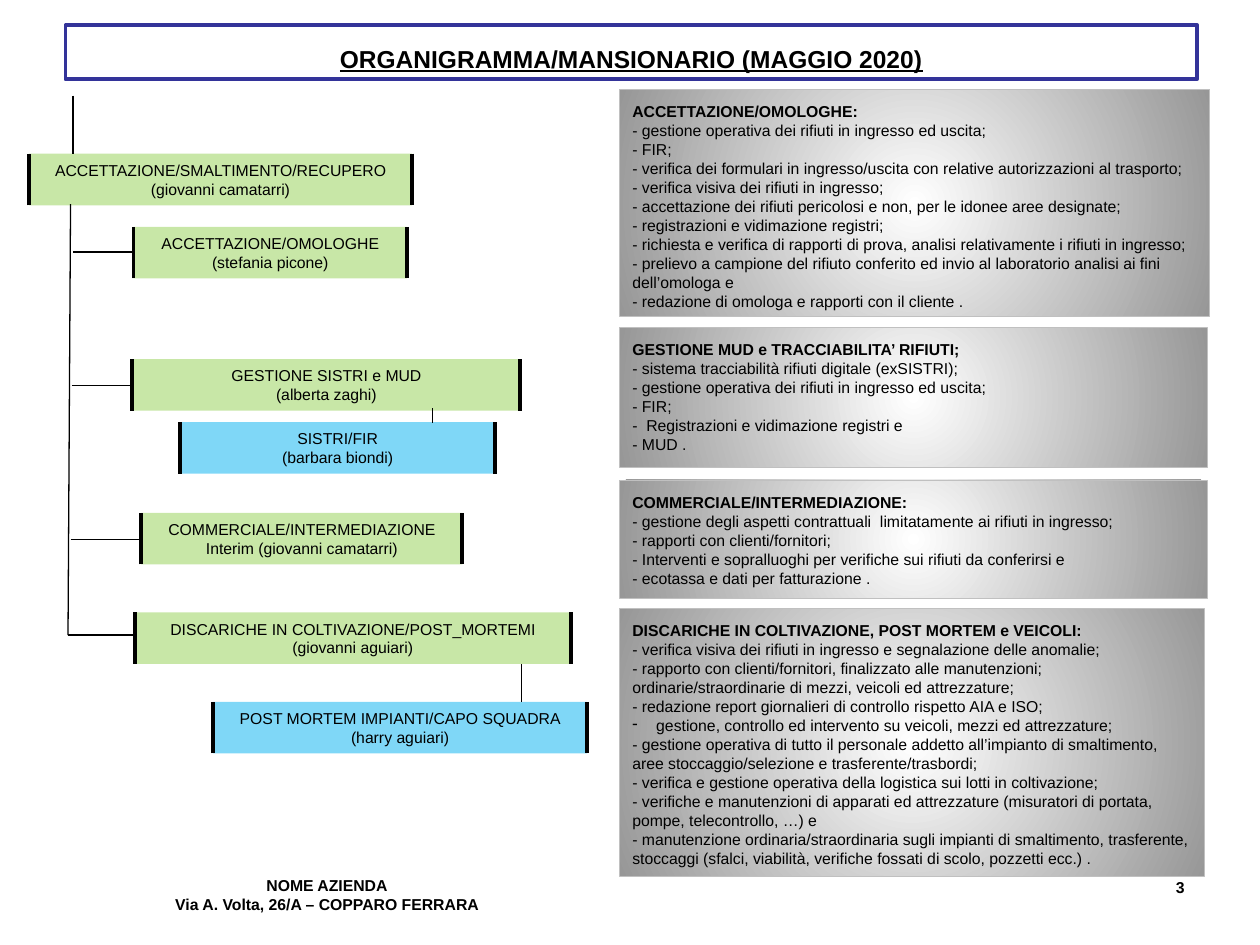
from lxml import etree
from pptx import Presentation
from pptx.dml.color import RGBColor
from pptx.enum.shapes import MSO_CONNECTOR, MSO_SHAPE
from pptx.enum.text import MSO_ANCHOR, PP_ALIGN
from pptx.oxml import parse_xml
from pptx.oxml.ns import nsdecls, qn
from pptx.util import Inches, Pt

BLACK = RGBColor(0, 0, 0)
NAVY = RGBColor(0x33, 0x33, 0x99)
SILVER = RGBColor(0xC0, 0xC0, 0xC0)
GREEN = RGBColor(0x92, 0xD0, 0x50)
BLUE = RGBColor(0x00, 0xB0, 0xF0)
WHITE = RGBColor(0xFF, 0xFF, 0xFF)
GREY = RGBColor(0x97, 0x97, 0x97)
FONT = "Arial"
BOX_H = 0.41
BULLET = "• "  # marks a duty set as a real dash bullet with a hanging indent

# left, top, width, colour, role, person
ROLES = [
    (0.23, 1.22, 3.04, GREEN, "ACCETTAZIONE/SMALTIMENTO/RECUPERO", "(giovanni camatarri)"),
    (1.06, 1.8, 2.17, GREEN, "ACCETTAZIONE/OMOLOGHE", "(stefania picone)"),
    (1.05, 2.85, 3.08, GREEN, "GESTIONE SISTRI e MUD", "(alberta zaghi)"),
    (1.43, 3.35, 2.5, BLUE, "SISTRI/FIR", "(barbara biondi)"),
    (1.12, 4.07, 2.55, GREEN, "COMMERCIALE/INTERMEDIAZIONE", "Interim (giovanni camatarri)"),
    (1.07, 4.86, 3.46, GREEN, "DISCARICHE IN COLTIVAZIONE/POST_MORTEMI", "(giovanni aguiari)"),
    (1.69, 5.57, 2.97, BLUE, "POST MORTEM IMPIANTI/CAPO SQUADRA", "(harry aguiari)"),
]

# x1, y1, x2, y2
LINKS = [
    (0.58, 0.76, 0.58, 1.22),
    (0.56, 1.62, 0.54, 5.04),
    (0.58, 2, 1.06, 2),
    (0.57, 3.06, 1.03, 3.06),
    (0.56, 4.28, 1.12, 4.28),
    (0.54, 5.04, 1.06, 5.04),
    (3.43, 3.24, 3.43, 3.36),
    (4.14, 5.27, 4.14, 5.57),
]

# top, width, height, heading, duties
PANELS = [
    (0.71, 4.68, 1.8, "ACCETTAZIONE/OMOLOGHE:", [
        "- gestione operativa dei rifiuti in ingresso ed uscita;",
        "- FIR;",
        "- verifica dei formulari in ingresso/uscita con relative autorizzazioni al trasporto;",
        "- verifica visiva dei rifiuti in ingresso;",
        "- accettazione dei rifiuti pericolosi e non, per le idonee aree designate;",
        "- registrazioni e vidimazione registri;",
        "- richiesta e verifica di rapporti di prova, analisi relativamente i rifiuti in ingresso;",
        "- prelievo a campione del rifiuto conferito ed invio al laboratorio analisi ai fini "
        "dell’omologa e",
        "- redazione di omologa e rapporti con il cliente .",
    ]),
    (2.6, 4.66, 1.11, "GESTIONE MUD e TRACCIABILITA’ RIFIUTI;", [
        "- sistema tracciabilità rifiuti digitale (exSISTRI);",
        "- gestione operativa dei rifiuti in ingresso ed uscita;",
        "- FIR;",
        "-  Registrazioni e vidimazione registri e",
        "- MUD .",
    ]),
    (3.81, 4.66, 0.94, "COMMERCIALE/INTERMEDIAZIONE:", [
        "- gestione degli aspetti contrattuali  limitatamente ai rifiuti in ingresso;",
        "- rapporti con clienti/fornitori;",
        "- Interventi e sopralluoghi per verifiche sui rifiuti da conferirsi e",
        "- ecotassa e dati per fatturazione .",
    ]),
    (4.83, 4.64, 2.13, "DISCARICHE IN COLTIVAZIONE, POST MORTEM e VEICOLI:", [
        "- verifica visiva dei rifiuti in ingresso e segnalazione delle anomalie;",
        "- rapporto con clienti/fornitori, finalizzato alle manutenzioni;  "
        "ordinarie/straordinarie di mezzi, veicoli ed attrezzature;",
        "- redazione report giornalieri di controllo rispetto AIA e ISO;",
        BULLET + "gestione, controllo ed intervento su veicoli, mezzi ed attrezzature;",
        "- gestione operativa di tutto il personale addetto all’impianto di smaltimento, "
        "aree stoccaggio/selezione e trasferente/trasbordi;",
        "- verifica e gestione operativa della logistica sui lotti in coltivazione;",
        "- verifiche e manutenzioni di apparati ed attrezzature (misuratori di portata, "
        "pompe, telecontrollo, …) e",
        "- manutenzione ordinaria/straordinaria sugli impianti di smaltimento, trasferente, "
        "stoccaggi (sfalci, viabilità, verifiche fossati di scolo, pozzetti ecc.) .",
    ]),
]


def add_run(p, text, size=9, bold=False):
    r = p.add_run()
    r.text = text
    r.font.name, r.font.size, r.font.bold = FONT, Pt(size), bold
    r.font.color.rgb = BLACK
    return r


def add_lines(tf, lines, align, bold=False):
    for i, text in enumerate(lines):
        p = tf.paragraphs[0] if i == 0 else tf.add_paragraph()
        p.alignment = align
        add_run(p, text, bold=bold)


def set_insets(tf, x, y):
    tf.margin_left = tf.margin_right = Inches(x)
    tf.margin_top = tf.margin_bottom = Inches(y)


def set_radial_fill(sp):
    """White centre fading to grey at the corners."""
    sp.fill.background()
    old = sp._element.spPr.find(qn("a:noFill"))
    old.getparent().replace(old, parse_xml(
        f'<a:gradFill {nsdecls("a")} rotWithShape="1"><a:gsLst>'
        f'<a:gs pos="0"><a:srgbClr val="{WHITE}"/></a:gs>'
        f'<a:gs pos="100000"><a:srgbClr val="{GREY}"/></a:gs></a:gsLst>'
        '<a:path path="circle"><a:fillToRect l="50000" t="50000" r="50000" b="50000"/>'
        '</a:path></a:gradFill>'))


def set_dash_bullet(p):
    pPr = p._p.get_or_add_pPr()
    pPr.set("marL", str(Inches(0.19)))
    pPr.set("indent", str(-Inches(0.19)))
    etree.SubElement(pPr, qn("a:buChar")).set("char", "-")


def add_title(s, left, top, width, height):
    sp = s.shapes.title
    sp.left, sp.top, sp.width, sp.height = map(Inches, (left, top, width, height))
    sp.line.color.rgb = NAVY
    sp.line.width = Pt(2.25)
    tf = sp.text_frame
    tf.vertical_anchor = MSO_ANCHOR.BOTTOM
    p = tf.paragraphs[0]
    p.alignment = PP_ALIGN.CENTER
    add_run(p, "ORGANIGRAMMA/MANSIONARIO (MAGGIO 2020)", 14, True).font.underline = True


def add_role(s, left, top, width, color, role, person):
    sp = s.shapes.add_shape(MSO_SHAPE.DOUBLE_BRACKET, *map(Inches, (left, top, width, BOX_H)))
    sp.adjustments[0] = 0
    sp.shadow.inherit = False
    sp.fill.solid()
    sp.fill.fore_color.rgb = color
    clr = sp._element.spPr.find(qn("a:solidFill"))[0]
    etree.SubElement(clr, qn("a:alpha")).set("val", "50000")
    sp.line.color.rgb = BLACK
    sp.line.width = Pt(2.25)
    tf = sp.text_frame
    tf.word_wrap = False
    tf.vertical_anchor = MSO_ANCHOR.MIDDLE
    set_insets(tf, 0.04, 0.02)
    add_lines(tf, (role, person), PP_ALIGN.CENTER)


def add_link(s, *ends):
    c = s.shapes.add_connector(MSO_CONNECTOR.STRAIGHT, *map(Inches, ends))
    c.line.color.rgb = BLACK
    c.line.width = Pt(0.75)
    etree.SubElement(c._element.spPr, qn("a:effectLst"))


def add_panel(s, left, top, width, height, heading, duties):
    sp = s.shapes.add_shape(MSO_SHAPE.RECTANGLE, *map(Inches, (left, top, width, height)))
    sp.shadow.inherit = False
    set_radial_fill(sp)
    sp.line.color.rgb = SILVER
    sp.line.width = Pt(0.5)
    tf = sp.text_frame
    tf.word_wrap = True
    tf.vertical_anchor = MSO_ANCHOR.TOP
    set_insets(tf, 0.1, 0.1)
    add_lines(tf, [heading], PP_ALIGN.LEFT, bold=True)
    for duty in duties:
        p = tf.add_paragraph()
        p.alignment = PP_ALIGN.LEFT
        if duty.startswith(BULLET):
            set_dash_bullet(p)
        add_run(p, duty.removeprefix(BULLET))


def add_footer(s, left, top, width, height, lines, align):
    tf = s.shapes.add_textbox(*map(Inches, (left, top, width, height))).text_frame
    tf.word_wrap = True
    add_lines(tf, lines, align, bold=True)


def main():
    prs = Presentation()
    prs.slide_width, prs.slide_height = Inches(10), Inches(7.5)
    s = prs.slides.add_slide(prs.slide_layouts[5])
    add_title(s, 0.52, 0.2, 8.98, 0.43)
    for role in ROLES:
        add_role(s, *role)
    for link in LINKS:
        add_link(s, *link)
    for panel in PANELS:
        add_panel(s, 4.92, *panel)
    add_footer(s, 1.01, 6.9, 3.17, 0.43,
               ["NOME AZIENDA", "Via A. Volta, 26/A – COPPARO FERRARA"], PP_ALIGN.CENTER)
    add_footer(s, 7.17, 6.92, 2.33, 0.43, ["3"], PP_ALIGN.RIGHT)
    prs.save("out.pptx")


if __name__ == "__main__":
    main()
